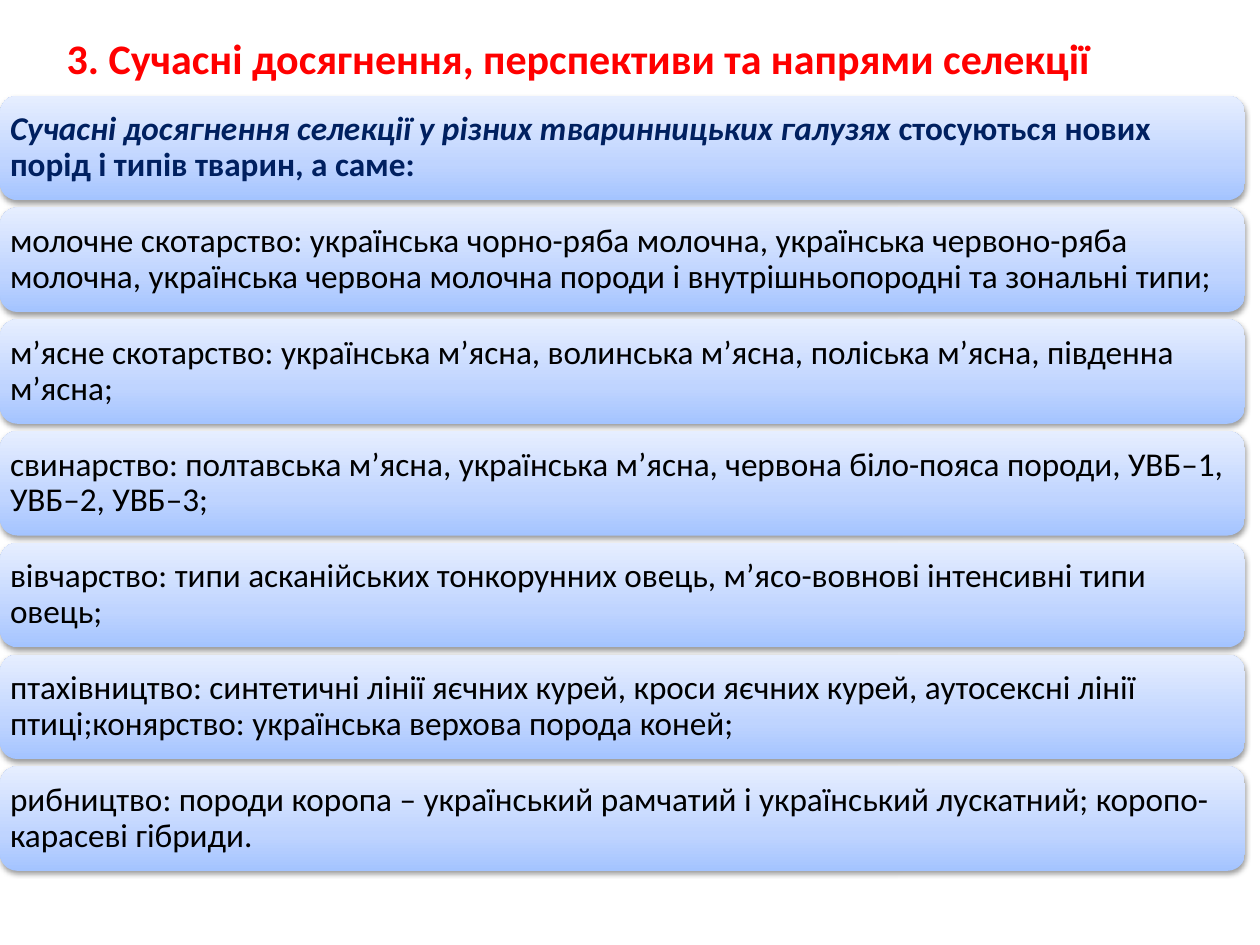
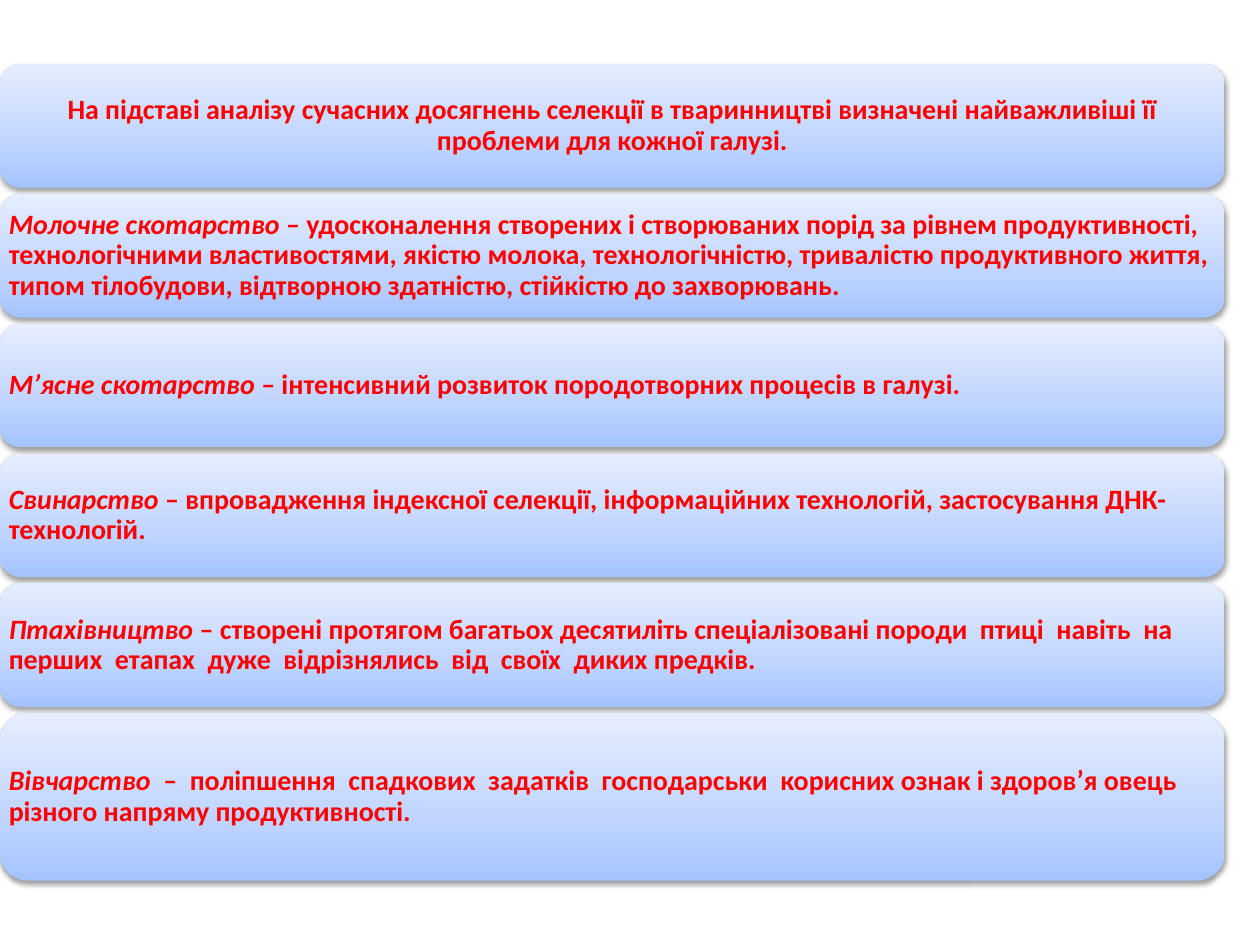
from lxml.etree import SubElement
from pptx import Presentation
from pptx.dml.color import RGBColor
from pptx.enum.shapes import MSO_SHAPE
from pptx.enum.text import MSO_ANCHOR, PP_ALIGN
from pptx.oxml.ns import qn
from pptx.util import Inches, Pt

COLORS = {
    "red": "FF0000",
    "navy": "002060",
    "black": "000000",
    "band bottom": "A4C4FF",
    "band middle": "BFD4FF",
    "band top": "E6EEFF",
}
FONT = "Calibri"
BAND_STOPS = [(0, "band bottom"), (35, "band middle"), (100, "band top")]
CORNER_INSET = 0.0488  # text inset of a rounded rectangle, as a share of its height

ACHIEVEMENTS = [
    "молочне скотарство: українська чорно-ряба молочна, українська червоно-ряба молочна, "
    "українська червона молочна породи і внутрішньопородні та зональні типи;",
    "м’ясне скотарство: українська м’ясна, волинська м’ясна, поліська м’ясна, південна м’ясна;",
    "свинарство: полтавська м’ясна, українська м’ясна, червона біло-пояса породи, "
    "УВБ–1, УВБ–2, УВБ–3;",
    "вівчарство: типи асканійських тонкорунних овець, м’ясо-вовнові інтенсивні типи овець;",
    "птахівництво: синтетичні лінії яєчних курей, кроси яєчних курей, аутосексні лінії "
    "птиці;конярство: українська верхова порода коней;",
    "рибництво: породи коропа – український рамчатий і український лускатний; "
    "коропо-карасеві гібриди.",
]

PROBLEMS = [
    ("Молочне скотарство ",
     "– удосконалення створених і створюваних порід за рівнем продуктивності, "
     "технологічними властивостями, якістю молока, технологічністю, тривалістю "
     "продуктивного життя, типом тілобудови, відтворною здатністю, стійкістю до захворювань."),
    ("М’ясне скотарство ", "– інтенсивний розвиток породотворних процесів в галузі."),
    ("Свинарство ",
     "– впровадження індексної селекції, інформаційних технологій, застосування ДНК-технологій."),
    ("Птахівництво ",
     "– створені протягом багатьох десятиліть спеціалізовані породи  птиці  навіть  на  "
     "перших  етапах  дуже  відрізнялись  від  своїх  диких предків."),
    ("Вівчарство  ",
     "–  поліпшення  спадкових  задатків  господарськи  корисних ознак і здоров’я овець "
     "різного напряму продуктивності."),
]


def add_color(parent, color):
    return SubElement(parent, qn("a:srgbClr"), val=COLORS[color])


class SlideBuilder:
    """Holds the deck's style and the page being filled."""

    def __init__(self):
        self.deck = Presentation()
        self.deck.slide_width, self.deck.slide_height = Inches(10), Inches(7.5)
        self.page = None

    def new_page(self):
        self.page = self.deck.slides.add_slide(self.deck.slide_layouts[6])

    def fill_para(self, para, lead, rest, size, color, bold):
        """Fill a paragraph with an italic lead and an upright rest."""
        font = para.font
        font.name, font.size, font.bold = FONT, Pt(size), bold
        font.color.rgb = RGBColor.from_string(COLORS[color])
        for text, italic in ((lead, True), (rest, False)):
            if text:
                span = para.add_run()
                span.text = text
                span.font.italic = italic

    def title(self, text):
        box = self.page.shapes.add_textbox(Inches(0.43), Inches(0.21), Inches(8.82), Inches(0.5))
        box.text_frame.word_wrap = True
        self.fill_para(box.text_frame.paragraphs[0], "", text, 24, "red", True)

    def style_band(self, box):
        """Apply the upward gradient, no outline and a soft shadow below."""
        properties = box._element.spPr
        gradient = SubElement(properties, qn("a:gradFill"), rotWithShape="1")
        stops = SubElement(gradient, qn("a:gsLst"))
        for percent, color in BAND_STOPS:
            add_color(SubElement(stops, qn("a:gs"), pos=str(percent * 1000)), color)
        SubElement(gradient, qn("a:lin"), ang="16200000", scaled="0")
        box.line.fill.background()
        effects = SubElement(properties, qn("a:effectLst"))
        shadow = SubElement(effects, qn("a:outerShdw"), blurRad=str(Pt(3.1)),
                            dist=str(Pt(1.6)), dir="5400000", rotWithShape="0")
        SubElement(add_color(shadow, "black"), qn("a:alpha"), val="38000")

    def band(self, top, width, height, margin, lead, rest, size, color, bold=False,
             align=PP_ALIGN.LEFT):
        box = self.page.shapes.add_shape(MSO_SHAPE.ROUNDED_RECTANGLE, 0, Inches(top),
                                         Inches(width), Inches(height))
        self.style_band(box)
        frame = box.text_frame
        frame.word_wrap = True
        frame.vertical_anchor = MSO_ANCHOR.MIDDLE
        inset = Inches(margin - height * CORNER_INSET)
        frame.margin_left = frame.margin_right = inset
        frame.margin_top = frame.margin_bottom = inset
        para = frame.paragraphs[0]
        para.alignment, para.line_spacing = align, 0.9
        self.fill_para(para, lead, rest, size, color, bold)


def build_achievements(builder):
    builder.new_page()
    builder.title("3. Сучасні досягнення, перспективи та напрями селекції")
    top, step = 0.76, 0.887
    shape = {"width": 9.88, "height": 0.83, "margin": 0.08, "size": 19}
    builder.band(top, lead="Сучасні досягнення селекції у різних тваринницьких галузях ",
                 rest="стосуються нових порід і типів тварин, а саме:",
                 color="navy", bold=True, **shape)
    for row, text in enumerate(ACHIEVEMENTS, start=1):
        builder.band(top + row * step, lead="", rest=text, color="black", **shape)


def build_problems(builder):
    builder.new_page()
    top, step, height, last_height = 0.51, 1.03, 0.98, 1.33
    style = {"width": 9.72, "margin": 0.07, "size": 16, "color": "red", "bold": True}
    builder.band(top, height=height, lead="",
                 rest="На підставі аналізу сучасних досягнень селекції в тваринництві "
                      "визначені найважливіші її проблеми для кожної галузі.",
                 align=PP_ALIGN.CENTER, **style)
    for row, (branch, problem) in enumerate(PROBLEMS, start=1):
        builder.band(top + row * step, lead=branch, rest=problem,
                     height=last_height if row == len(PROBLEMS) else height, **style)


def main():
    builder = SlideBuilder()
    build_achievements(builder)
    build_problems(builder)
    builder.deck.save("out.pptx")


if __name__ == "__main__":
    main()
